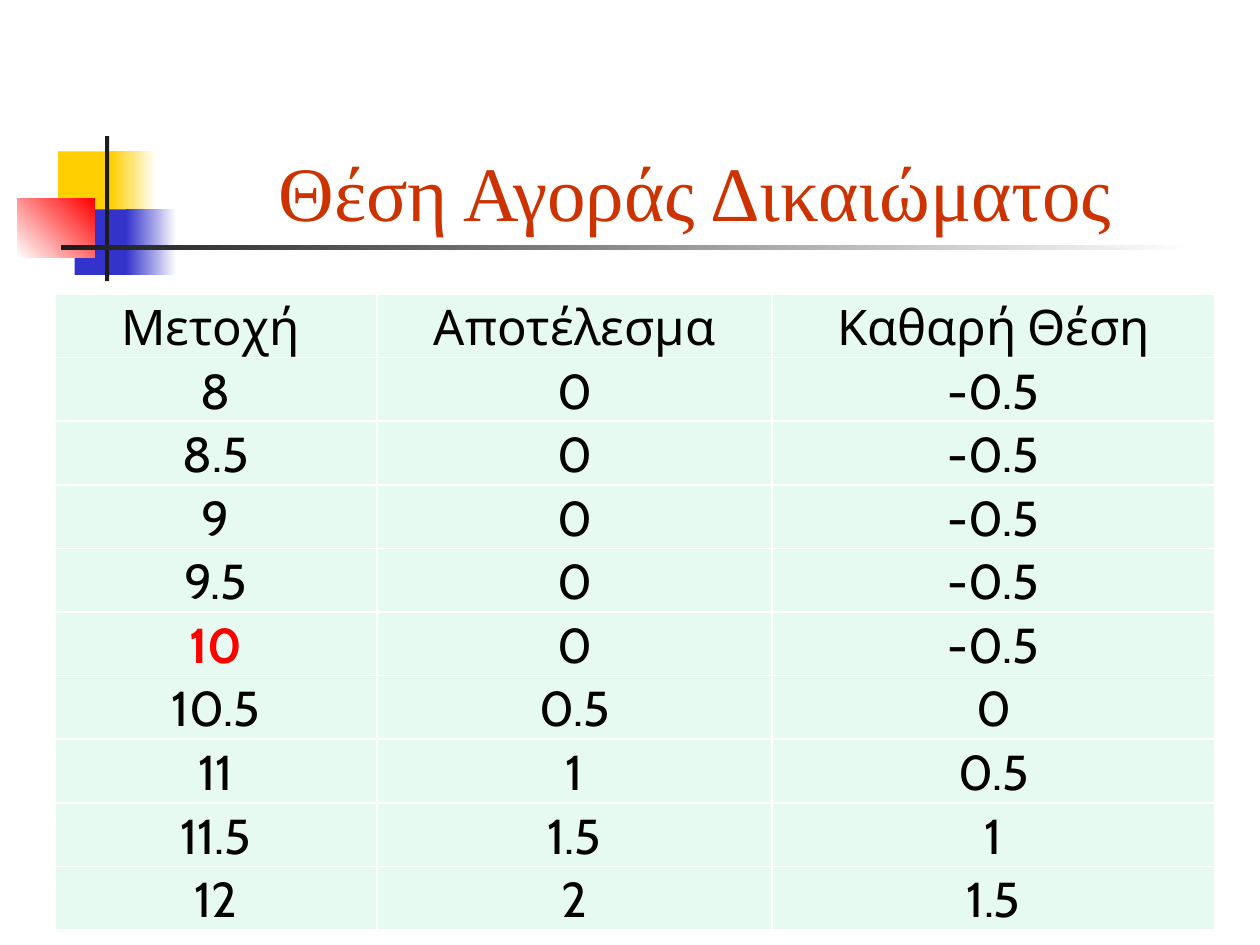
"""Build a slide tabulating the payoff of a long call option."""
import pptx
import pptx.dml.color
import pptx.enum.shapes
import pptx.enum.text
import pptx.util
import lxml.etree
from pptx.oxml.ns import qn

Pt = pptx.util.Pt
RGB = pptx.dml.color.RGBColor.from_string
BOTTOM = pptx.enum.text.MSO_ANCHOR.BOTTOM

THEME = {
    "yellow": "FFCF01", "blue": "3333CC", "red": "FF0000", "dark": "1C1C1C",
    "white": "FFFFFF", "title": "CC3300", "text": "000000", "cell": "E7FAF1",
    "title_font": "Times New Roman", "cell_font": "Cabin",
    "title_size": 44, "cell_size": 28,
}


def write(tf, text, font="cell_font", size="cell_size", color="text", bold=False):
    p = tf.paragraphs[0]
    p.alignment = pptx.enum.text.PP_ALIGN.CENTER
    r = p.add_run()
    r.text = text
    r.font.name = THEME[font]
    r.font.size = Pt(THEME[size])
    r.font.bold = bold
    r.font.color.rgb = RGB(THEME[color])


def add_border(cell):
    tcPr = cell._tc.get_or_add_tcPr()
    for i, side in enumerate(("a:lnL", "a:lnR", "a:lnT", "a:lnB")):
        ln = lxml.etree.Element(qn(side), w=str(Pt(1)))
        fill = lxml.etree.SubElement(ln, qn("a:solidFill"))
        lxml.etree.SubElement(fill, qn("a:srgbClr"), val=THEME["white"])
        tcPr.insert(i, ln)


prs = pptx.Presentation()
prs.slide_width, prs.slide_height = Pt(720), Pt(540)
s = prs.slides.add_slide(prs.slide_layouts[5])

ornaments = [
    (33.2, 86.5, 34.5, 37.6, ["yellow"], 0),
    (63.3, 86.5, 26, 37.6, ["yellow", "white"], 0),
    (42.7, 119.7, 33, 37.4, ["blue"], 0),
    (72, 119.7, 28.8, 37.4, ["blue", "white"], 0),
    (10, 113.7, 44, 33.3, ["white", "red"], 45),
    (60, 77.8, 2.4, 82.8, ["dark"], 0),
    (34.8, 140.2, 648, 2.4, ["dark", "white"], 0),
]
for x, y, w, h, colors, angle in ornaments:
    sp = s.shapes.add_shape(pptx.enum.shapes.MSO_SHAPE.RECTANGLE, Pt(x), Pt(y), Pt(w), Pt(h))
    sp.shadow.inherit = False
    sp.line.fill.background()
    if len(colors) == 1:
        sp.fill.solid()
        sp.fill.fore_color.rgb = RGB(THEME[colors[0]])
    else:
        sp.fill.gradient()
        sp.fill.gradient_angle = angle
        for stop, color in zip(sp.fill.gradient_stops, colors):
            stop.color.rgb = RGB(THEME[color])

title = s.shapes.title
title.left, title.top, title.width, title.height = Pt(90.7), Pt(49), Pt(613.5), Pt(90)
tf = title.text_frame
tf.vertical_anchor = BOTTOM
write(tf, "Θέση Αγοράς Δικαιώματος", font="title_font", size="title_size", color="title")

strike, premium = 10, 0.5
rows = [("Μετοχή ", "Αποτέλεσμα", "Καθαρή Θέση")]
for i in range(9):
    price = 8 + i * 0.5
    payoff = max(price - strike, 0)
    rows.append([f"{v:g}" for v in (price, payoff, payoff - premium)])

widths = [184, 226, 253]
row_height = 36.36
table = s.shapes.add_table(len(rows), len(widths), Pt(31.3), Pt(168), Pt(sum(widths)),
                           Pt(row_height * len(rows))).table
table.first_row = table.horz_banding = False
for col, width in zip(table.columns, widths):
    col.width = Pt(width)
for i, values in enumerate(rows):
    table.rows[i].height = Pt(row_height)
    for j, text in enumerate(values):
        cell = table.cell(i, j)
        cell.margin_left = cell.margin_right = cell.margin_top = Pt(0.75)
        cell.margin_bottom = Pt(0)
        cell.vertical_anchor = BOTTOM
        cell.fill.solid()
        cell.fill.fore_color.rgb = RGB(THEME["cell"])
        add_border(cell)
        at_strike = j == 0 and text == str(strike)
        write(cell.text_frame, text, color="red" if at_strike else "text", bold=at_strike)

prs.save("out.pptx")
